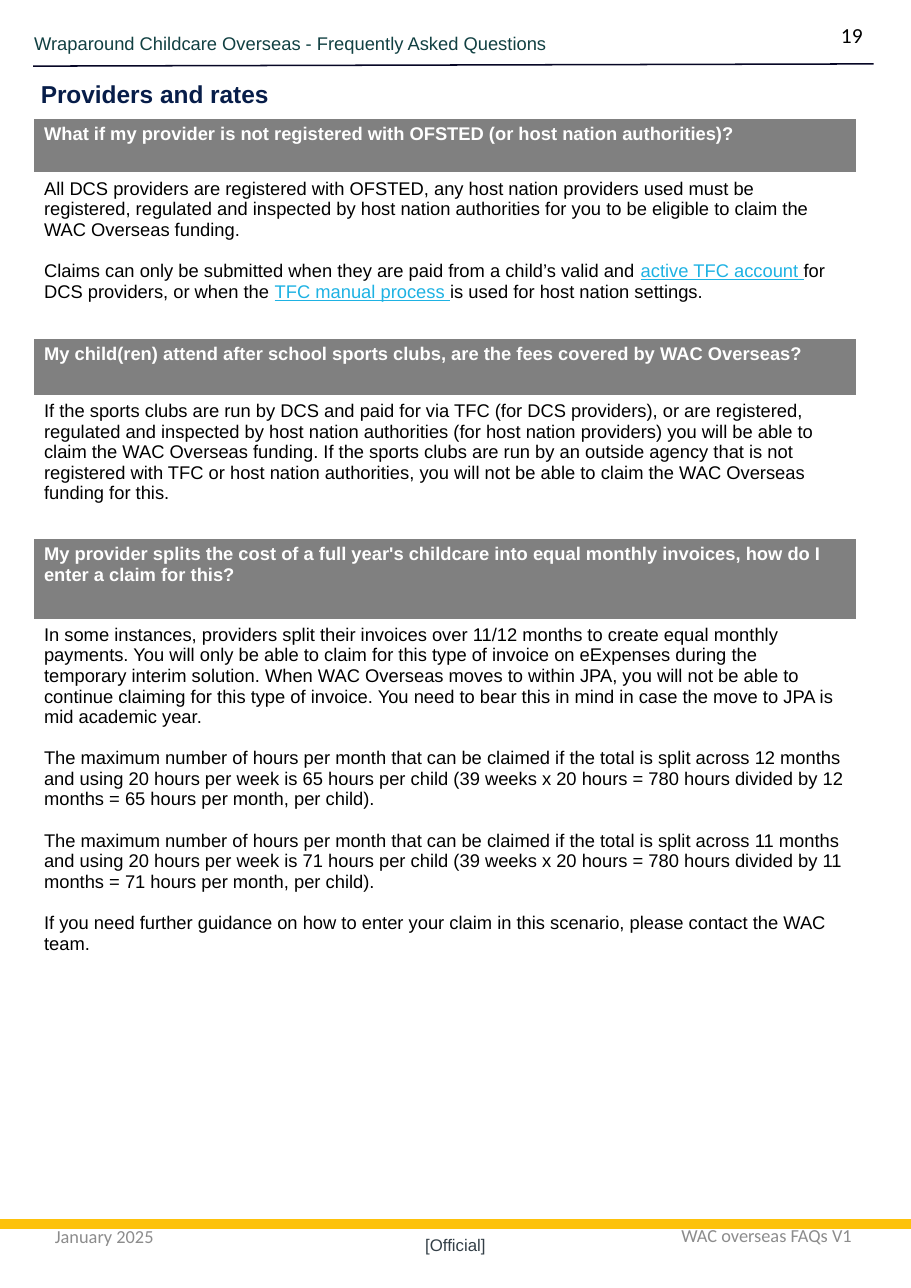
from dataclasses import dataclass

from lxml.etree import SubElement
from pptx import Presentation
from pptx.dml.color import RGBColor as RGB
from pptx.enum.shapes import MSO_CONNECTOR as CONNECTOR
from pptx.enum.text import MSO_ANCHOR as ANCHOR, PP_ALIGN as ALIGN
from pptx.oxml.ns import qn
from pptx.util import Inches, Pt


@dataclass(frozen=True)
class Theme:
    sans: str = "Arial"
    footer_font: str = "Calibri"
    heading: RGB = RGB(0x07, 0x1D, 0x49)
    running_head: RGB = RGB(0x11, 0x40, 0x42)
    head_rule: RGB = RGB(0x06, 0x06, 0x25)
    footer_rule: RGB = RGB(0xFD, 0xC2, 0x0B)
    footer: RGB = RGB(0x8C, 0x8C, 0x8C)
    marking: RGB = RGB(0x33, 0x3F, 0x47)
    band: RGB = RGB(0x80, 0x80, 0x80)
    link: RGB = RGB(0x1E, 0xB2, 0xE3)
    white: RGB = RGB(0xFF, 0xFF, 0xFF)
    black: RGB = RGB(0, 0, 0)
    heading_size: float = 16
    page_size: float = 14
    text_size: float = 12
    marking_size: float = 11
    answer_gap: float = 13.5


THEME = Theme()

# Each entry: question, question row height, answer row height, answer paragraphs.
# A paragraph is a list of (text, is_link) parts.
FAQS = [
    ("What if my provider is not registered with OFSTED (or host nation authorities)?", 0.5, 1.5, [
        [("All DCS providers are registered with OFSTED, any host nation providers used must be "
          "registered, regulated and inspected by host nation authorities for you to be eligible "
          "to claim the WAC Overseas funding.", False)],
        [("Claims can only be submitted when they are paid from a child’s valid and ", False),
         ("active TFC account ", True),
         ("for DCS providers, or when the ", False),
         ("TFC manual process ", True),
         ("is used for host nation settings.", False)],
    ]),
    ("My child(ren) attend after school sports clubs, are the fees covered by WAC Overseas?", 0.52, 1.3, [
        [("If the sports clubs are run by DCS and paid for via TFC (for DCS providers), or are "
          "registered, regulated and inspected by host nation authorities (for host nation "
          "providers) you will be able to claim the WAC Overseas funding. If the sports clubs are "
          "run by an outside agency that is not registered with TFC or host nation authorities, "
          "you will not be able to claim the WAC Overseas funding for this.", False)],
    ]),
    ("My provider splits the cost of a full year's childcare into equal monthly invoices, "
     "how do I enter a claim for this?", 0.73, 3.5, [
        [("In some instances, providers split their invoices over 11/12 months to create equal "
          "monthly payments. You will only be able to claim for this type of invoice on eExpenses "
          "during the temporary interim solution. When WAC Overseas moves to within JPA, you will "
          "not be able to continue claiming for this type of invoice. You need to bear this in "
          "mind in case the move to JPA is mid academic year.", False)],
        *[[(f"The maximum number of hours per month that can be claimed if the total is split "
            f"across {months} months and using 20 hours per week is {hours} hours per child (39 "
            f"weeks x 20 hours = 780 hours divided by {months} months = {hours} hours per month, "
            f"per child).", False)]
          for months, hours in ((12, 65), (11, 71))],
        [("If you need further guidance on how to enter your claim in this scenario, please "
          "contact the WAC team.", False)],
    ]),
]


def style(paragraph, color, size=THEME.text_size, font=THEME.sans, bold=False):
    paragraph.font.name = font
    paragraph.font.size = Pt(size)
    paragraph.font.bold = bold
    paragraph.font.color.rgb = color


def add_heading(slide, text, left, top, width, height):
    heading = slide.shapes.title
    heading.left, heading.top = Inches(left), Inches(top)
    heading.width, heading.height = Inches(width), Inches(height)
    heading.text_frame.vertical_anchor = ANCHOR.TOP
    heading.text_frame.text = text
    line = heading.text_frame.paragraphs[0]
    line.alignment = ALIGN.LEFT
    style(line, THEME.heading, THEME.heading_size, bold=True)


def add_label(slide, text, box, color, size=THEME.text_size, font=THEME.sans,
              align=ALIGN.LEFT, anchor=ANCHOR.TOP, inset=True):
    frame = slide.shapes.add_textbox(*map(Inches, box)).text_frame
    frame.word_wrap = True
    frame.vertical_anchor = anchor
    if not inset:
        frame.margin_left = frame.margin_right = frame.margin_top = frame.margin_bottom = 0
    frame.text = text
    frame.paragraphs[0].alignment = align
    style(frame.paragraphs[0], color, size, font)


def add_rule(slide, start, end, color, weight):
    rule = slide.shapes.add_connector(CONNECTOR.STRAIGHT, *map(Inches, start + end))
    rule.line.color.rgb = color
    rule.line.width = Pt(weight)
    SubElement(rule._element.spPr, qn("a:effectLst"))


def fill_cell(cell, paragraphs, fill, color, bold=False):
    cell.fill.solid()
    cell.fill.fore_color.rgb = fill
    frame = cell.text_frame
    for index, parts in enumerate(paragraphs):
        paragraph = frame.add_paragraph() if index else frame.paragraphs[0]
        style(paragraph, color, bold=bold)
        if index:
            paragraph.space_before = Pt(THEME.answer_gap)
        for text, is_link in parts:
            run = paragraph.add_run()
            run.text = text
            if is_link:
                run.font.underline = True
                run.font.color.rgb = THEME.link


def add_faq_table(slide, faqs, left, top, width):
    height = sum(question_height + answer_height for _, question_height, answer_height, _ in faqs)
    table = slide.shapes.add_table(2 * len(faqs), 1, Inches(left), Inches(top),
                                   Inches(width), Inches(height)).table
    table.first_row = table.horz_banding = False
    for index, (question, question_height, answer_height, answer) in enumerate(faqs):
        row = 2 * index
        table.rows[row].height = Inches(question_height)
        table.rows[row + 1].height = Inches(answer_height)
        fill_cell(table.cell(row, 0), [[(question, False)]], THEME.band, THEME.white, bold=True)
        fill_cell(table.cell(row + 1, 0), answer, THEME.white, THEME.black)


def main():
    deck = Presentation()
    deck.slide_width, deck.slide_height = Inches(8.27), Inches(11.69)
    slide = deck.slides.add_slide(deck.slide_layouts.get_by_name("Title Only"))

    add_label(slide, "Wraparound Childcare Overseas - Frequently Asked Questions",
              (0.31, 0.29, 5.51, 0.4), THEME.running_head, inset=False)
    add_rule(slide, (0.3, 0.6), (7.93, 0.58), THEME.head_rule, 1)
    add_label(slide, "19", (7.27, 0.15, 0.66, 0.34), THEME.black, THEME.page_size,
              THEME.footer_font, ALIGN.RIGHT)

    add_heading(slide, "Providers and rates", 0.27, 0.67, 4.7, 0.37)
    add_faq_table(slide, FAQS, 0.3, 1.07, 7.48)

    add_label(slide, "January 2025", (0.4, 10.91, 1.93, 0.62), THEME.footer,
              font=THEME.footer_font, anchor=ANCHOR.MIDDLE)
    add_label(slide, "WAC overseas FAQs V1", (5.65, 10.9, 2.62, 0.62), THEME.footer,
              font=THEME.footer_font, align=ALIGN.CENTER, anchor=ANCHOR.MIDDLE)
    add_rule(slide, (0, 11.11), (8.27, 11.11), THEME.footer_rule, 6)
    add_label(slide, "[Official]", (0, 11.2, 8.27, 0.19), THEME.marking, THEME.marking_size,
              align=ALIGN.CENTER, anchor=ANCHOR.BOTTOM, inset=False)

    deck.save("out.pptx")


if __name__ == "__main__":
    main()
